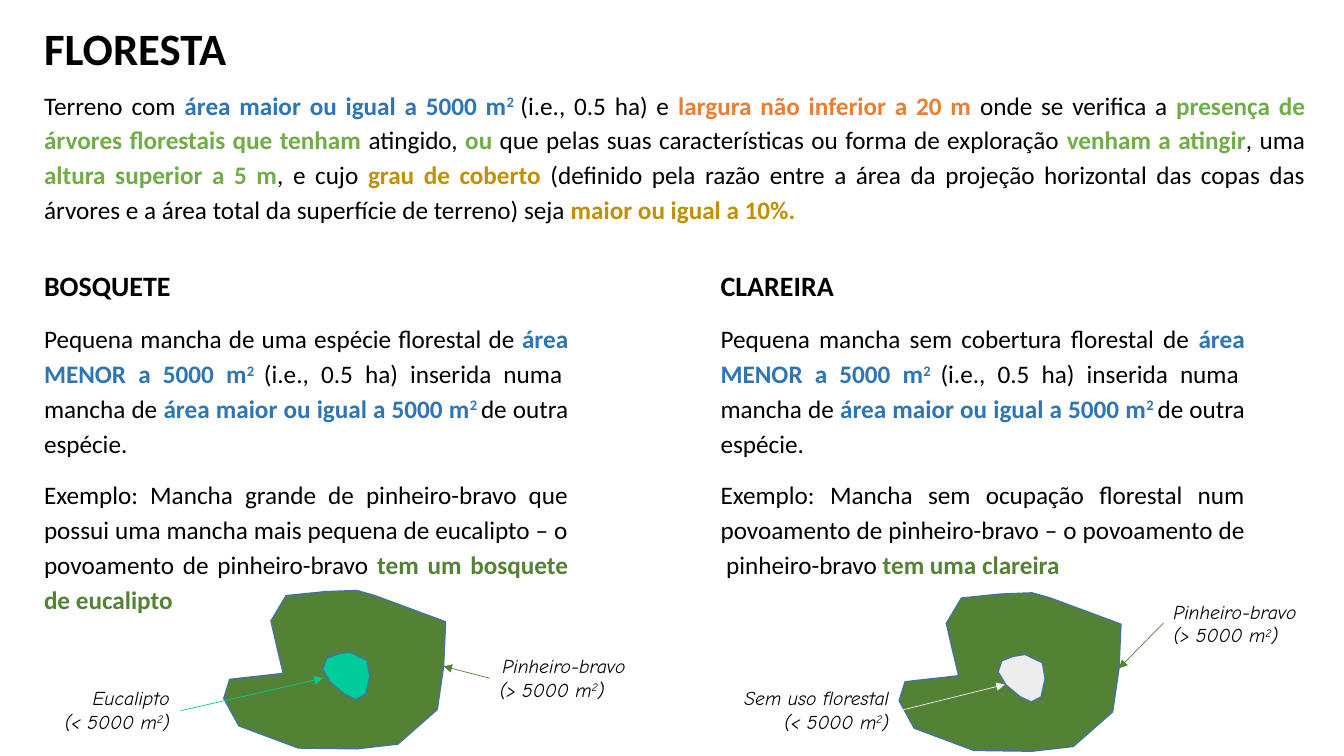
import pptx
import pptx.dml.color
import pptx.enum.shapes
import pptx.enum.text
import pptx.oxml
import pptx.oxml.ns
import pptx.util
from pptx.util import Cm

ALIGN = pptx.enum.text.PP_ALIGN
BLACK, BLUE, ORANGE, GREEN = "000000", "2E75B6", "ED7D31", "70AD47"
GOLD, FOREST, OUTLINE = "BF9000", "548235", "43739E"
FIXED_SPACE = chr(160)
LEFT_COLUMN, RIGHT_COLUMN = 0.86, 17.91
STAND_SHIFT = (17.02, 0.06)

BODY = {"size": pptx.util.Pt(18), "name": "Calibri"}
LABEL = {"size": pptx.util.Pt(14), "name": "Comic Neue", "italic": True}
BODY_PARAGRAPH = {
    "alignment": ALIGN.JUSTIFY,
    "line_spacing": 1.15,
    "space_before": pptx.util.Pt(6),
    "space_after": pptx.util.Pt(6),
}

STAND = [
    (9.45, 15.01), (11.23, 15.67), (11.18, 16.79), (11.02, 17.88),
    (10.03, 18.75), (8.99, 18.87), (7.52, 18.85), (6.02, 18.29),
    (5.64, 17.6), (5.79, 17.12), (7.14, 16.97), (7.01, 16.43),
    (6.83, 15.65), (7.21, 15.01), (8.2, 14.91), (8.99, 14.88),
]
PATCH = [
    (8.81, 16.43), (9.25, 16.64), (9.32, 17.04), (9.22, 17.5), (8.97, 17.63),
    (8.69, 17.5), (8.33, 17.2), (8.13, 16.87), (8.23, 16.59), (8.51, 16.48),
]

FOREST_DEFINITION = [
    ("Terreno com ", BLACK), ("área maior ou igual a 5000 m", BLUE), ("2 ", BLUE, True),
    ("(i.e., 0.5 ha) e ", BLACK), ("largura não inferior a 20 m ", ORANGE),
    ("onde se verifica a ", BLACK), ("presença de árvores florestais que tenham", GREEN),
    (" atingido, ", BLACK), ("ou", GREEN),
    (" que pelas suas características ou forma de exploração ", BLACK),
    ("venham a atingir", GREEN), (", uma ", BLACK), ("altura superior a 5 m", GREEN),
    (", e cujo ", BLACK), ("grau de coberto ", GOLD),
    ("(definido pela razão entre a área da projeção horizontal das copas das árvores "
     "e a área total da superfície de terreno) seja ", BLACK),
    ("maior ou igual a 10%.", GOLD),
]


def colour(value):
    return pptx.dml.color.RGBColor.from_string(value)


def set_attributes(target, values):
    for name, value in values.items():
        setattr(target, name, value)


def add_run(paragraph, font, text, text_colour=BLACK, superscript=False):
    run = paragraph.add_run()
    run.text = text
    set_attributes(run.font, font)
    run.font.color.rgb = colour(text_colour)
    if text_colour != BLACK:
        run.font.bold = True
    if superscript:
        run._r.get_or_add_rPr().set("baseline", "30000")


def add_text(slide, left, top, width, height, paragraphs, font, margin_right=0.25):
    shape = slide.shapes.add_textbox(Cm(left), Cm(top), Cm(width), Cm(height))
    frame = shape.text_frame
    frame.word_wrap = True
    frame.margin_right = Cm(margin_right)
    frame.auto_size = pptx.enum.text.MSO_AUTO_SIZE.SHAPE_TO_FIT_TEXT
    for index, (layout, runs) in enumerate(paragraphs):
        paragraph = frame.add_paragraph() if index else frame.paragraphs[0]
        set_attributes(paragraph, layout)
        for run in runs:
            add_run(paragraph, font, *run)


def add_heading(slide, left, top, height, text, size):
    font = {"size": pptx.util.Pt(size), "name": "Calibri", "bold": True}
    add_text(slide, left, top, 9.4, height, [({}, [(text,)])], font)


def add_body(slide, left, top, width, height, *paragraphs):
    add_text(slide, left, top, width, height,
             [(BODY_PARAGRAPH, runs) for runs in paragraphs], BODY, margin_right=0.51)


def add_column(slide, left, height, heading, subject, example, conclusion):
    add_heading(slide, left, 6.63, 1.12, heading, 20)
    definition = [
        (f"Pequena mancha {subject} florestal de ", BLACK),
        ("área MENOR a 5000 m", BLUE), ("2 ", BLUE, True),
        (f"(i.e., 0.5 ha) inserida numa{FIXED_SPACE} mancha de ", BLACK),
        ("área maior ou igual a 5000 m", BLUE), ("2 ", BLUE, True),
        ("de outra espécie.", BLACK),
    ]
    add_body(slide, left, 7.92, 13.97, height, definition,
             [(example, BLACK), (conclusion, FOREST)])


def add_area(slide, points, shift, fill):
    corners = [(Cm(x + shift[0]), Cm(y + shift[1])) for x, y in points]
    builder = slide.shapes.build_freeform(*corners[0], scale=1.0)
    builder.add_line_segments(corners[1:], close=True)
    shape = builder.convert_to_shape()
    shape.shadow.inherit = False
    shape.fill.solid()
    shape.fill.fore_color.rgb = colour(fill)
    shape.line.color.rgb = colour(OUTLINE)
    shape.line.width = pptx.util.Pt(1)


def add_stand(slide, shift, patch_fill):
    add_area(slide, STAND, shift, FOREST)
    add_area(slide, PATCH, shift, patch_fill)


def add_label(slide, left, top, width, name, sign, alignments):
    size = [(f"({sign} 5000 m",), ("2", BLACK, True), (")",)]
    paragraphs = [({"alignment": alignment}, runs)
                  for alignment, runs in zip(alignments, ([(name,)], size))]
    add_text(slide, left, top, width, 1.45, paragraphs, LABEL)


def add_arrow(slide, start, end, line_colour):
    connector = slide.shapes.add_connector(
        pptx.enum.shapes.MSO_CONNECTOR.STRAIGHT, *map(Cm, start + end))
    connector.line.color.rgb = colour(line_colour)
    connector.line.width = pptx.util.Pt(0.5)
    head = pptx.oxml.parse_xml(
        f'<a:tailEnd {pptx.oxml.ns.nsdecls("a")} type="triangle"/>')
    connector.line._get_or_add_ln().append(head)
    effects = pptx.oxml.parse_xml(f'<a:effectLst {pptx.oxml.ns.nsdecls("a")}/>')
    connector._element.spPr.append(effects)


def main():
    presentation = pptx.Presentation()
    presentation.slide_width = Cm(33.87)
    presentation.slide_height = Cm(19.05)
    slide = presentation.slides.add_slide(presentation.slide_layouts[6])

    add_heading(slide, LEFT_COLUMN, 0.41, 1.63, "FLORESTA", 32)
    add_body(slide, LEFT_COLUMN, 2.03, 32.54, 3.73, FOREST_DEFINITION)

    add_column(slide, LEFT_COLUMN, 7.77, "BOSQUETE", "de uma espécie",
               "Exemplo: Mancha grande de pinheiro-bravo que possui uma mancha mais "
               "pequena de eucalipto – o povoamento de pinheiro-bravo ",
               "tem um bosquete de eucalipto")
    add_column(slide, RIGHT_COLUMN, 6.88, "CLAREIRA", "sem cobertura",
               "Exemplo: Mancha sem ocupação florestal num povoamento de "
               f"pinheiro-bravo – o povoamento de {FIXED_SPACE}pinheiro-bravo",
               " tem uma clareira")

    add_stand(slide, (0, 0), "00CC99")
    add_stand(slide, STAND_SHIFT, "EDEDED")

    both_right = (ALIGN.RIGHT, ALIGN.RIGHT)
    add_label(slide, 12.34, 16.36, 3.68, "Pinheiro-bravo", ">", (ALIGN.RIGHT, ALIGN.LEFT))
    add_label(slide, 0.16, 17.17, 4.37, "Eucalipto", "<", both_right)
    add_label(slide, 29.32, 14.99, 3.68, "Pinheiro-bravo", ">", (ALIGN.LEFT, ALIGN.LEFT))
    add_label(slide, 18.29, 17.17, 4.37, "Sem uso florestal", "<", both_right)

    add_arrow(slide, (12.34, 17.09), (11.18, 16.79), FOREST)
    add_arrow(slide, (4.55, 17.91), (8.13, 17.09), "00CC99")
    add_arrow(slide, (29.32, 15.7), (28.2, 16.84), FOREST)
    add_arrow(slide, (22.66, 17.91), (25.32, 17.25), "F2F2F2")

    presentation.save("out.pptx")


if __name__ == "__main__":
    main()
